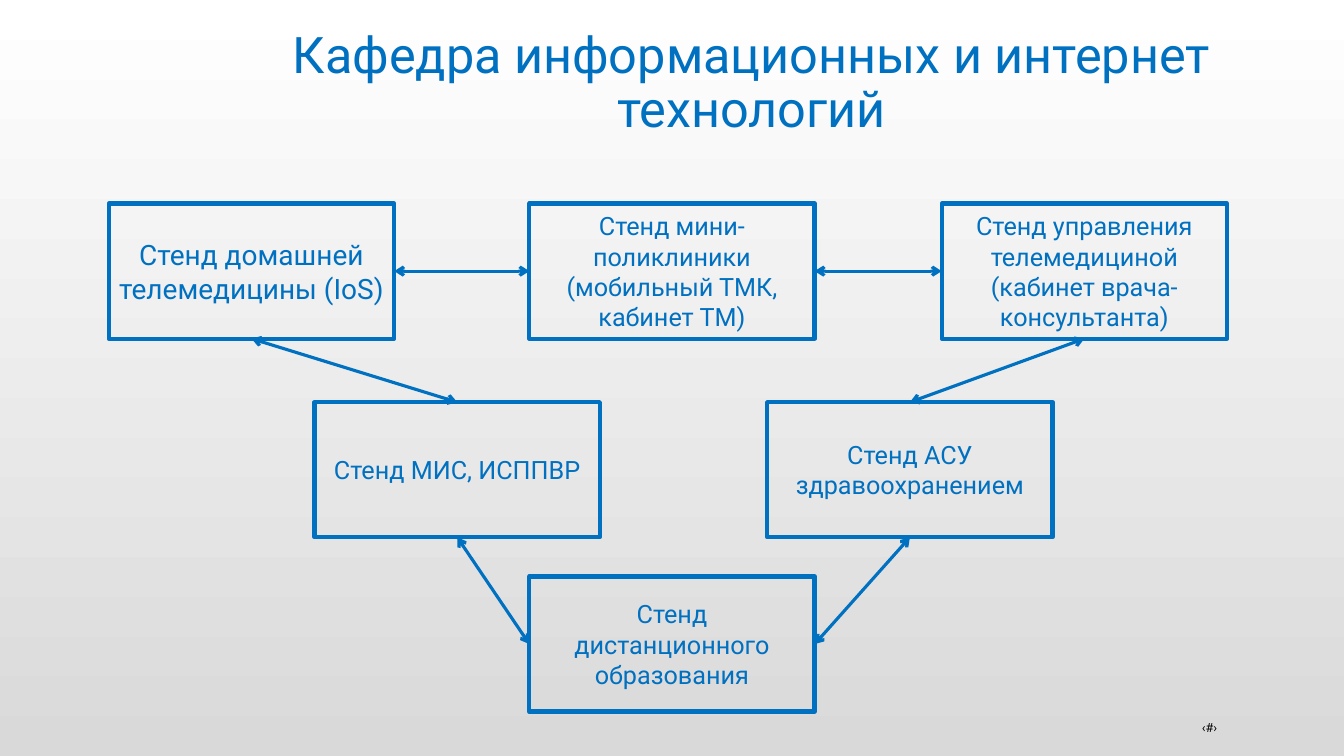
"""Build a slide showing how the department's telemedicine stands are linked."""
from dataclasses import dataclass

from lxml import etree
from pptx import Presentation
from pptx.dml.color import RGBColor
from pptx.enum.shapes import MSO_CONNECTOR, MSO_SHAPE
from pptx.enum.text import MSO_ANCHOR, MSO_AUTO_SIZE, PP_ALIGN
from pptx.oxml.ns import qn
from pptx.shapes.autoshape import Shape
from pptx.slide import Slide
from pptx.util import Inches, Pt

RECT = MSO_SHAPE.RECTANGLE
STRAIGHT = MSO_CONNECTOR.STRAIGHT
MIDDLE = MSO_ANCHOR.MIDDLE
NO_AUTOFIT = MSO_AUTO_SIZE.NONE
CENTER, RIGHT = PP_ALIGN.CENTER, PP_ALIGN.RIGHT
TOP_SIDE, LEFT_SIDE, BOTTOM_SIDE, RIGHT_SIDE = range(4)

COLUMNS = (1.08, 3.12, 5.25, 7.61, 9.34)
ROWS = (2.02, 3.99, 5.72)
BOX_W, BOX_H = 2.83, 1.34


@dataclass(frozen=True)
class Theme:
    """Colours, font, type sizes and line widths of the slide."""
    accent: RGBColor = RGBColor(0x00, 0x70, 0xC0)
    dark: RGBColor = RGBColor(0x00, 0x00, 0x00)
    bg_bottom: RGBColor = RGBColor(0xD9, 0xD9, 0xD9)
    bg_top: RGBColor = RGBColor(0xFF, 0xFF, 0xFF)
    font: str = "Roboto"
    title: float = 36
    large: float = 20
    body: float = 18
    small: float = 9
    border: float = 3
    link: float = 2.25


@dataclass(frozen=True)
class Stand:
    """A labelled box in one cell of the grid."""
    key: str
    col: int
    row: int
    text: str
    size: float


@dataclass(frozen=True)
class Link:
    """A two-way arrow between the sides of two stands."""
    start: str
    start_side: int
    end: str
    end_side: int


THEME = Theme()

STANDS = (
    Stand("home", 0, 0, "Стенд домашней телемедицины (IoS)", THEME.large),
    Stand("clinic", 2, 0, "Стенд мини-поликлиники (мобильный ТМК, кабинет ТМ)", THEME.body),
    Stand("control", 4, 0, "Стенд управления телемедициной (кабинет врача-консультанта)", THEME.body),
    Stand("records", 1, 1, "Стенд МИС, ИСППВР", THEME.body),
    Stand("health", 3, 1, "Стенд АСУ здравоохранением", THEME.body),
    Stand("education", 2, 2, "Стенд дистанционного образования", THEME.body),
)

LINKS = (
    Link("home", RIGHT_SIDE, "clinic", LEFT_SIDE),
    Link("clinic", RIGHT_SIDE, "control", LEFT_SIDE),
    Link("records", TOP_SIDE, "home", BOTTOM_SIDE),
    Link("health", TOP_SIDE, "control", BOTTOM_SIDE),
    Link("records", BOTTOM_SIDE, "education", LEFT_SIDE),
    Link("health", BOTTOM_SIDE, "education", RIGHT_SIDE),
)


def write(sp: Shape, text: str, size: float, color: RGBColor, align: PP_ALIGN) -> None:
    """Put one vertically centred paragraph into a shape."""
    tf = sp.text_frame
    tf.word_wrap = True
    tf.auto_size = NO_AUTOFIT
    tf.vertical_anchor = MIDDLE
    p = tf.paragraphs[0]
    p.alignment = align
    r = p.add_run()
    r.text = text
    r.font.name = THEME.font
    r.font.size = Pt(size)
    r.font.color.rgb = color


def paint_background(s: Slide) -> None:
    """Fill the slide with a vertical gradient."""
    fill = s.background.fill
    fill.gradient()
    fill.gradient_angle = 90
    for stop, color in zip(fill.gradient_stops, (THEME.bg_bottom, THEME.bg_top)):
        stop.color.rgb = color
    fill.gradient_stops[0].position = 0
    fill.gradient_stops[1].position = 1


def add_title(s: Slide, text: str) -> None:
    """Place and fill the title placeholder."""
    sp = s.shapes.title
    sp.left, sp.top, sp.width, sp.height = map(Inches, (1.58, 0.11, 11.75, 1.45))
    write(sp, text, THEME.title, THEME.accent, CENTER)
    sp.text_frame.paragraphs[0].line_spacing = 0.9


def add_stand(s: Slide, stand: Stand) -> Shape:
    """Draw an outlined box at its grid cell."""
    sp = s.shapes.add_shape(RECT, Inches(COLUMNS[stand.col]), Inches(ROWS[stand.row]),
                            Inches(BOX_W), Inches(BOX_H))
    sp.shadow.inherit = False
    sp.fill.background()
    sp.line.color.rgb = THEME.accent
    sp.line.width = Pt(THEME.border)
    write(sp, stand.text, stand.size, THEME.accent, CENTER)
    return sp


def add_link(s: Slide, link: Link, boxes: dict[str, Shape]) -> None:
    """Join two boxes with a double-headed arrow."""
    cx = s.shapes.add_connector(STRAIGHT, 0, 0, 0, 0)
    cx.begin_connect(boxes[link.start], link.start_side)
    cx.end_connect(boxes[link.end], link.end_side)
    cx.line.color.rgb = THEME.accent
    cx.line.width = Pt(THEME.link)
    ln = cx.line._get_or_add_ln()
    for tag in ("a:headEnd", "a:tailEnd"):
        etree.SubElement(ln, qn(tag), type="arrow")
    etree.SubElement(cx._element.spPr, qn("a:effectLst"))


def main() -> None:
    """Assemble and save the slide."""
    prs = Presentation()
    prs.slide_width, prs.slide_height = Inches(13.33), Inches(7.5)
    s = prs.slides.add_slide(prs.slide_layouts[5])
    paint_background(s)
    add_title(s, "Кафедра информационных и интернет технологий")
    number = s.shapes.add_textbox(*map(Inches, (11.25, 7.09, 0.92, 0.26)))
    write(number, "‹#›", THEME.small, THEME.dark, RIGHT)
    boxes = {stand.key: add_stand(s, stand) for stand in STANDS}
    for link in LINKS:
        add_link(s, link, boxes)
    prs.save("out.pptx")


if __name__ == "__main__":
    main()
